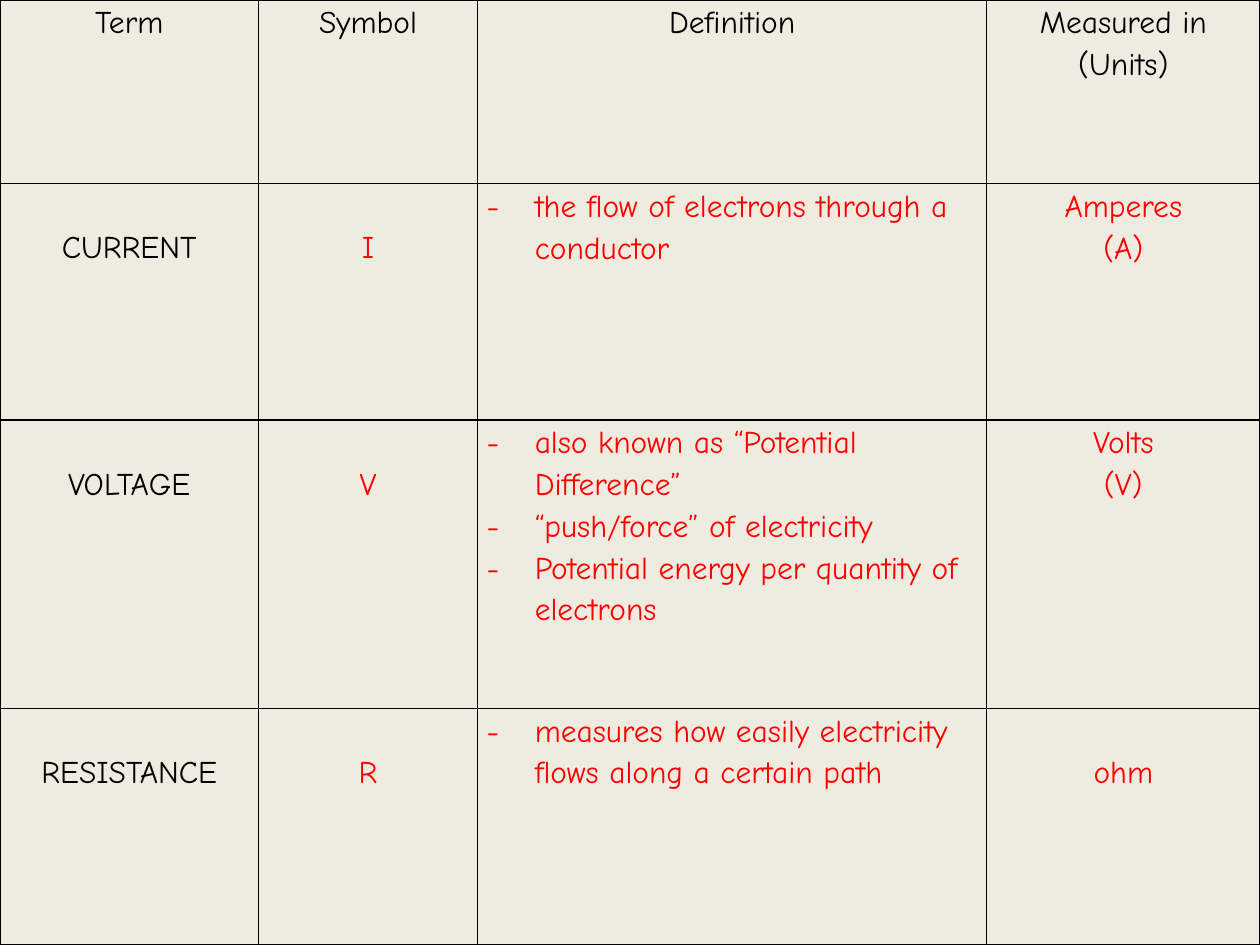
"""Build a one-slide table of electrical terms, symbols, definitions and units."""
from lxml import etree
from pptx import Presentation
from pptx.dml.color import RGBColor
from pptx.enum.text import PP_ALIGN
from pptx.oxml.ns import qn
from pptx.util import Cm, Pt

CENTER, LEFT = PP_ALIGN.CENTER, PP_ALIGN.LEFT
FONT, BLACK, RED, CREAM = "Comic Neue", "000000", "FF0000", "EEECE1"
LINE = Cm(0.84)
COLS = [5.21, 4.42, 10.26, 5.51]
ROWS = [3.7, 4.77, 5.81, 4.77]
TERMS = [
    [["Term"], ["Symbol"], ["Definition"], ["Measured in", "(Units)"]],
    [["CURRENT"], ["I"], ["the flow of electrons through a conductor"], ["Amperes", "(A)"]],
    [["VOLTAGE"], ["V"],
     ["also known as “Potential Difference”", "“push/force” of electricity",
      "Potential energy per quantity of electrons"],
     ["Volts", "(V)"]],
    [["RESISTANCE"], ["R"],
     ["measures how easily electricity flows along a certain path"], ["ohm"]],
]


def rgb(value):
    """Return the colour for a hex string."""
    return RGBColor.from_string(value)


def add_borders(cell):
    """Draw a thin black line on each side of a cell."""
    tc_pr = cell._tc.get_or_add_tcPr()
    for side in ("lnL", "lnR", "lnT", "lnB"):
        ln = etree.SubElement(tc_pr, qn(f"a:{side}"), w=str(Pt(1)))
        fill = etree.SubElement(ln, qn("a:solidFill"))
        etree.SubElement(fill, qn("a:srgbClr"), val=BLACK)


prs = Presentation()
prs.slide_width, prs.slide_height = Cm(25.4), Cm(19.05)
s = prs.slides.add_slide(prs.slide_layouts[6])
s.background.fill.solid()
s.background.fill.fore_color.rgb = rgb(CREAM)

table = s.shapes.add_table(len(ROWS), len(COLS), 0, 0, prs.slide_width, prs.slide_height).table
table.first_row = table.horz_banding = False
for column, width in zip(table.columns, COLS):
    column.width = Cm(width)
for row, height in zip(table.rows, ROWS):
    row.height = Cm(height)

for i, term in enumerate(TERMS):
    for j, lines in enumerate(term):
        cell = table.cell(i, j)
        add_borders(cell)
        cell.fill.background()
        bulleted = i > 0 and j == 2
        lowered = i > 0 and (j < 2 or lines == ["ohm"])
        margins = {"margin_left": Cm(0.18), "margin_right": Cm(0.18),
                   "margin_top": LINE if lowered else 0, "margin_bottom": 0}
        for name, value in margins.items():
            setattr(cell, name, value)
        tf = cell.text_frame
        for k, line in enumerate(lines):
            p = tf.add_paragraph() if k else tf.paragraphs[0]
            p.alignment = LEFT if bulleted else CENTER
            p.line_spacing = 1.15
            if bulleted:
                p_pr = p._p.get_or_add_pPr()
                p_pr.set("marL", str(Cm(0.97)))
                p_pr.set("indent", str(-Cm(0.97)))
                etree.SubElement(p_pr, qn("a:buFont"), typeface=FONT)
                etree.SubElement(p_pr, qn("a:buChar"), char="-")
            r = p.add_run()
            r.text = line
            for name, value in {"name": FONT, "size": Pt(18), "bold": False}.items():
                setattr(r.font, name, value)
            r.font.color.rgb = rgb(RED if i and j else BLACK)

prs.save("out.pptx")
